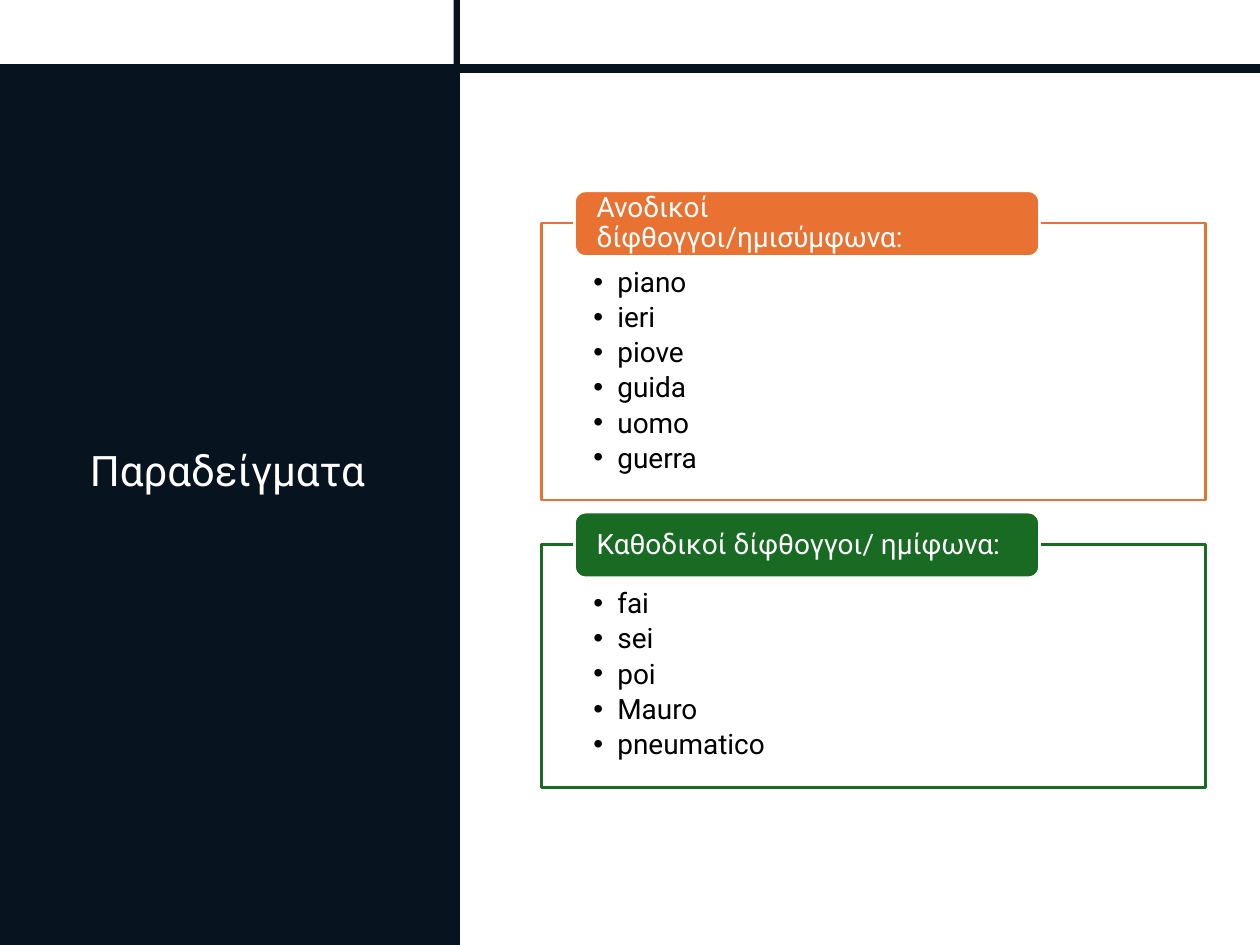
from lxml.etree import SubElement
from pptx import Presentation
from pptx.dml.color import RGBColor
from pptx.enum.shapes import MSO_SHAPE
from pptx.enum.text import MSO_ANCHOR, MSO_AUTO_SIZE, PP_ALIGN
from pptx.oxml.ns import qn
from pptx.util import Inches, Pt

COLORS = {
    "navy": "071420",
    "white": "FFFFFF",
    "black": "000000",
    "orange": "E97132",
    "green": "196B24",
}
GROUPS = [
    ("Ανοδικοί δίφθογγοι/ημισύμφωνα:", "orange", 17.7, 22,
     ["piano", "ieri", "piove", "guida", "uomo", "guerra"]),
    ("Καθοδικοί δίφθογγοι/ ημίφωνα:", "green", 43.2, 19.3,
     ["fai", "sei", "poi", "Mauro", "pneumatico"]),
]


def color(name):
    return RGBColor.from_string(COLORS[name])


def write(shape, text, size=16, ink="white", align=PP_ALIGN.LEFT,
          anchor=MSO_ANCHOR.MIDDLE, pad=(0.1, 0.05, 0.1, 0.05),
          after=0, bullet=False):
    frame = shape.text_frame
    frame.text = text
    frame.word_wrap = True
    frame.auto_size = MSO_AUTO_SIZE.NONE
    frame.vertical_anchor = anchor
    (frame.margin_left, frame.margin_top,
     frame.margin_right, frame.margin_bottom) = map(Inches, pad)
    for para in frame.paragraphs:
        para.alignment = align
        para.line_spacing = 0.9
        para.space_before = Pt(0)
        para.space_after = Pt(after)
        font = para.runs[0].font
        font.name = "Roboto"
        font.size = Pt(size)
        font.color.rgb = color(ink)
        if bullet:
            para.level = 1
            props = para._p.get_or_add_pPr()
            props.set("marL", str(Inches(0.19)))
            props.set("indent", str(Inches(-0.19)))
            SubElement(props, qn("a:buFont")).set("typeface", "Arial")
            SubElement(props, qn("a:buChar")).set("char", "•")


class Deck:
    cols, rows = 100, 75

    def __init__(self):
        self.file = Presentation()
        self.file.slide_width = Inches(10)
        self.file.slide_height = Inches(7.5)
        self.slide = self.file.slides.add_slide(self.file.slide_layouts[3])

    def area(self, x, y, w, h):
        col = self.file.slide_width / self.cols
        row = self.file.slide_height / self.rows
        return round(x * col), round(y * row), round(w * col), round(h * row)

    def block(self, *box, fill="navy", line=None, kind=MSO_SHAPE.RECTANGLE):
        shape = self.slide.shapes.add_shape(kind, *self.area(*box))
        shape.shadow.inherit = False
        self.paint(shape, fill, line)
        return shape

    def paint(self, shape, fill, line):
        shape.fill.solid()
        shape.fill.fore_color.rgb = color(fill)
        if line:
            shape.line.color.rgb = color(line)
            shape.line.width = Pt(1.5)
        else:
            shape.line.fill.background()

    def holder(self, index, *box):
        shape = self.slide.placeholders[index]
        shape.left, shape.top, shape.width, shape.height = self.area(*box)
        shape.element.getparent().append(shape.element)
        return shape

    def title(self, text, *box):
        write(self.holder(0, *box), text, size=24, align=PP_ALIGN.CENTER)

    def group(self, index, head, hue, top, high, words):
        body = self.holder(index, 43, top, 52.7, high)
        self.paint(body, "white", hue)
        write(body, "\n".join(words), ink="black", anchor=MSO_ANCHOR.TOP,
              pad=(0.41, 0.36, 0.41, 0.12), after=2.8, bullet=True)
        tag = self.block(45.6, top - 2.55, 36.9, 5.2, fill=hue, line="white",
                         kind=MSO_SHAPE.ROUNDED_RECTANGLE)
        write(tag, head, pad=(0.15, 0, 0.15, 0))


def main():
    deck = Deck()
    deck.block(0, 5.8, 36.5, 69.2)
    deck.title("Παραδείγματα", 4.9, 8.4, 26.3, 58.2)
    deck.block(36, 0, 0.5, 75)
    deck.block(0, 5.1, 100, 0.7)
    for index, group in enumerate(GROUPS, 1):
        deck.group(index, *group)
    deck.file.save("out.pptx")


if __name__ == "__main__":
    main()
